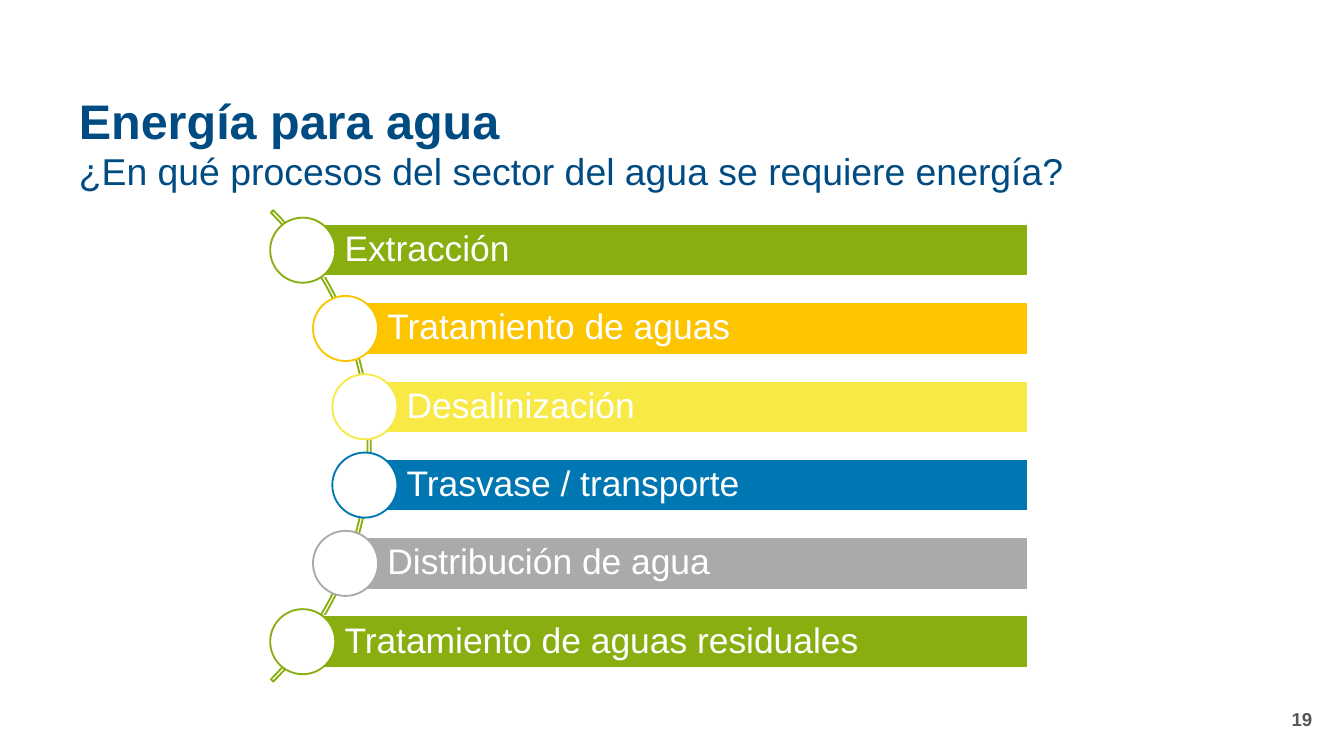
from dataclasses import dataclass
from math import sqrt

from pptx import Presentation
from pptx.dml.color import RGBColor
from pptx.enum.shapes import MSO_SHAPE
from pptx.enum.text import MSO_ANCHOR, PP_ALIGN
from pptx.util import Cm, Pt

RECT = MSO_SHAPE.RECTANGLE
OVAL = MSO_SHAPE.OVAL
ARC = MSO_SHAPE.BLOCK_ARC
TOP = MSO_ANCHOR.TOP
MIDDLE = MSO_ANCHOR.MIDDLE
LEFT = PP_ALIGN.LEFT
RIGHT = PP_ALIGN.RIGHT


@dataclass(frozen=True)
class Theme:
    font: str = "Arial"
    white: str = "FFFFFF"
    navy: str = "004C82"
    dark: str = "575756"
    green: str = "89AE10"
    amber: str = "FDC400"
    yellow: str = "F8E946"
    blue: str = "0077B2"
    gray: str = "AAAAAA"
    title: int = 26
    subtitle: int = 20
    label: int = 19
    number: int = 10
    line: int = 1


class Deck:
    def __init__(self, theme):
        self.theme = theme
        self.prs = Presentation()
        self.prs.slide_width, self.prs.slide_height = Cm(25.4), Cm(14.29)
        self.s = self.prs.slides.add_slide(self.prs.slide_layouts[6])

    def fill_text(self, sp, text, size, color, bold=False, align=LEFT, anchor=MIDDLE,
                  insets=(0.25, 0.13, 0.25, 0.13), spacing=0.9):
        tf = sp.text_frame
        tf.word_wrap = True
        tf.vertical_anchor = anchor
        tf.margin_left, tf.margin_top, tf.margin_right, tf.margin_bottom = map(Cm, insets)
        p = tf.paragraphs[0]
        p.alignment = align
        p.line_spacing = spacing
        r = p.add_run()
        r.text = text
        r.font.name = self.theme.font
        r.font.size = Pt(size)
        r.font.bold = bold
        r.font.color.rgb = RGBColor.from_string(color)

    def text(self, box, *args, **kwargs):
        sp = self.s.shapes.add_textbox(*map(Cm, box))
        self.fill_text(sp, *args, **kwargs)

    def shape(self, kind, box, line, fill=None):
        sp = self.s.shapes.add_shape(kind, *map(Cm, box))
        sp.shadow.inherit = False
        if fill:
            sp.fill.solid()
            sp.fill.fore_color.rgb = RGBColor.from_string(fill)
        else:
            sp.fill.background()
        sp.line.color.rgb = RGBColor.from_string(line)
        sp.line.width = Pt(self.theme.line)
        return sp

    def arc(self, cx, cy, size, color):
        sp = self.shape(ARC, (cx - size / 2, cy - size / 2, size, size), color)
        for i, value in enumerate((189, 27, 0.005)):
            sp.adjustments[i] = value

    def step(self, cx, cy, right, text, color):
        t = self.theme
        bar, dot = 0.99, 1.23
        sp = self.shape(RECT, (cx, cy - bar / 2, right - cx, bar), t.white, color)
        self.fill_text(sp, text, t.label, t.white, insets=(0.79, 0.13, 0.13, 0.13))
        self.shape(OVAL, (cx - dot / 2, cy - dot / 2, dot, dot), color, t.white)


def main():
    t = Theme()
    deck = Deck(t)
    deck.text((1.24, 2.9, 23.8, 0.76), "¿En qué procesos del sector del agua se requiere energía?",
              t.subtitle, t.navy, anchor=TOP, insets=(0.25, 0, 0.2, 0))

    cx, cy, radius, pitch, right = 0.71, 8.43, 6.23, 1.48, 19.43
    steps = (
        ("Extracción", t.green),
        ("Tratamiento de aguas", t.amber),
        ("Desalinización", t.yellow),
        ("Trasvase / transporte", t.blue),
        ("Distribución de agua", t.gray),
        ("Tratamiento de aguas residuales", t.green),
    )
    deck.arc(cx, cy, 12.6, t.green)
    for i, (text, color) in enumerate(steps):
        dy = (i - (len(steps) - 1) / 2) * pitch
        deck.step(cx + sqrt(radius ** 2 - dy ** 2), cy + dy, right, text, color)

    deck.text((1.24, 1.6, 23.8, 1.5), "Energía para agua", t.title, t.navy, bold=True)
    deck.text((19.33, 13.21, 5.72, 0.76), "19", t.number, t.dark, bold=True,
              align=RIGHT, spacing=1)
    deck.prs.save("out.pptx")


if __name__ == "__main__":
    main()
